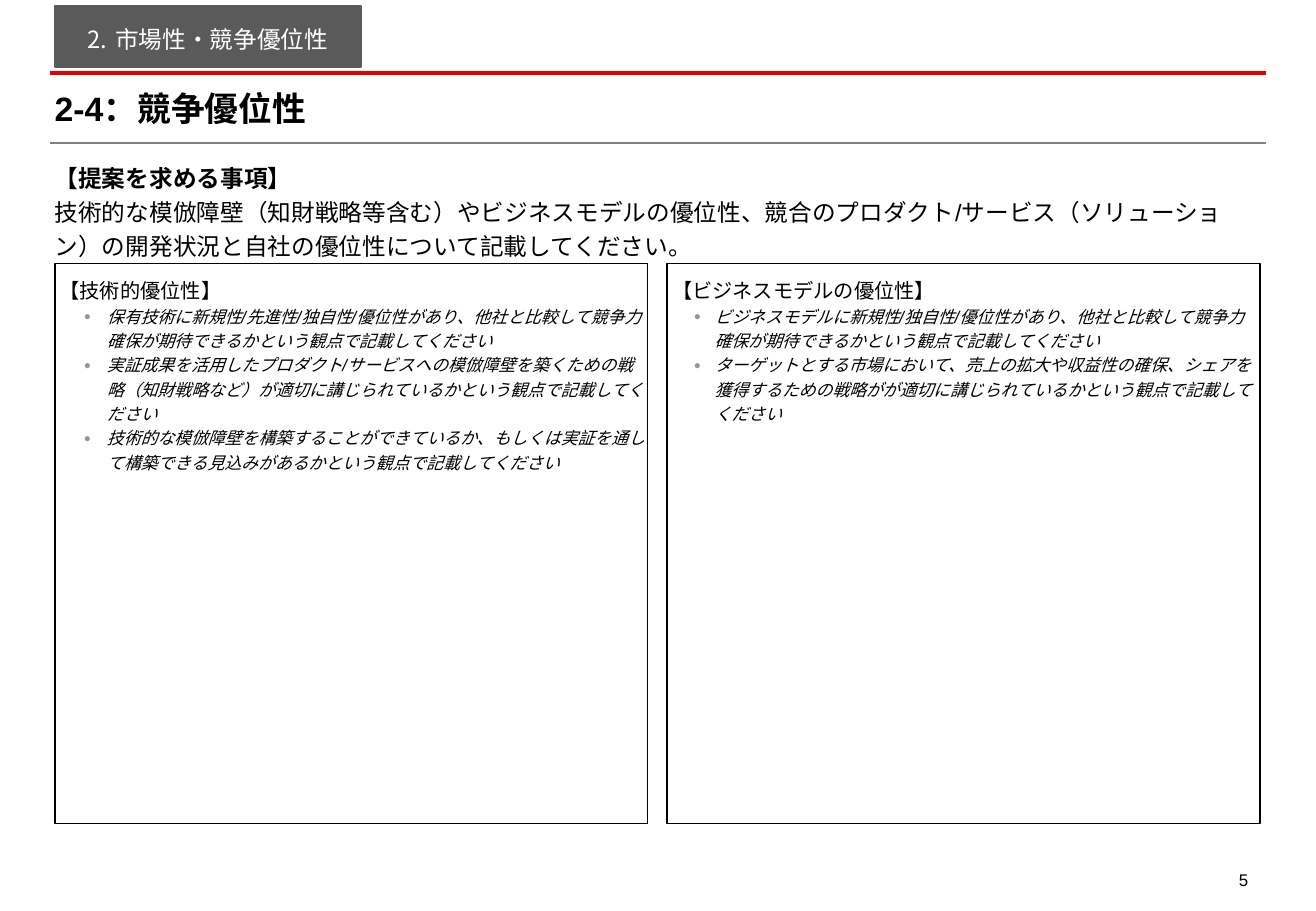
from lxml import etree
from pptx import Presentation
from pptx.dml.color import RGBColor
from pptx.enum.shapes import MSO_CONNECTOR, MSO_SHAPE
from pptx.enum.text import MSO_ANCHOR, PP_ALIGN
from pptx.oxml.ns import qn
from pptx.util import Inches, Pt

STRAIGHT, RECTANGLE = MSO_CONNECTOR.STRAIGHT, MSO_SHAPE.RECTANGLE
TOP, MIDDLE = MSO_ANCHOR.TOP, MSO_ANCHOR.MIDDLE
LEFT, CENTER, RIGHT = PP_ALIGN.LEFT, PP_ALIGN.CENTER, PP_ALIGN.RIGHT

# Content
SECTION = "市場性・競争優位性"
SECTION_NUMBER = 2
TITLE = "2-4：競争優位性"
REQUEST_HEADING = "【提案を求める事項】"
REQUEST = ("技術的な模倣障壁（知財戦略等含む）やビジネスモデルの優位性、競合のプロダクト/サービス"
           "（ソリューション）の開発状況と自社の優位性について記載してください。")
PAGE_NUMBER = "5"
# heading, (bullet text position, hanging indent), bullets
PANELS = [
    ("【技術的優位性】", (0.39, -0.19), [
        "保有技術に新規性/先進性/独自性/優位性があり、他社と比較して競争力確保が期待できるかという観点で記載してください",
        "実証成果を活用したプロダクト/サービスへの模倣障壁を築くための戦略（知財戦略など）が適切に講じられているかという観点で記載してください",
        "技術的な模倣障壁を構築することができているか、もしくは実証を通して構築できる見込みがあるかという観点で記載してください",
    ]),
    ("【ビジネスモデルの優位性】", (0.35, -0.17), [
        "ビジネスモデルに新規性/独自性/優位性があり、他社と比較して競争力確保が期待できるかという観点で記載してください",
        "ターゲットとする市場において、売上の拡大や収益性の確保、シェアを獲得するための戦略がが適切に講じられているかという観点で記載してください",
    ]),
]

# Layout in inches
SLIDE_WIDTH, SLIDE_HEIGHT = 10.83, 7.5
MARGIN = 0.45
CONTENT_WIDTH = 9.92
PANEL_TOP, PANEL_HEIGHT, PANEL_GAP = 2.17, 4.61, 0.16
PANEL_WIDTH = (CONTENT_WIDTH - PANEL_GAP) / 2
RULES = [(0.6, "E60000", 2), (1.18, "808080", 1.25)]
RULE_START, RULE_END = 0.41, 10.42
FONT = "Arial"

presentation = Presentation()
presentation.slide_width = Inches(SLIDE_WIDTH)
presentation.slide_height = Inches(SLIDE_HEIGHT)
slide = presentation.slides.add_slide(presentation.slide_layouts[6])


def color(value):
    return RGBColor.from_string(value)


def set_frame(shape, insets, anchor=TOP, wrap=True):
    frame = shape.text_frame
    frame.word_wrap = wrap
    frame.vertical_anchor = anchor
    (frame.margin_left, frame.margin_top,
     frame.margin_right, frame.margin_bottom) = [Inches(inset) for inset in insets]
    return frame


def add_text_box(box, insets=(0, 0, 0, 0), anchor=TOP):
    return set_frame(slide.shapes.add_textbox(*map(Inches, box)), insets, anchor)


def add_box(box, fill, line, insets, anchor=TOP, wrap=True):
    shape = slide.shapes.add_shape(RECTANGLE, *map(Inches, box))
    shape.shadow.inherit = False
    shape.fill.solid()
    shape.fill.fore_color.rgb = color(fill)
    shape.line.color.rgb = color(line)
    shape.line.width = Pt(1)
    return set_frame(shape, insets, anchor, wrap)


def add_paragraph(frame, text, size, first=False, bold=False, italic=False,
                  ink="000000", align=LEFT, spacing=1.2):
    paragraph = frame.paragraphs[0] if first else frame.add_paragraph()
    paragraph.alignment = align
    paragraph.line_spacing = spacing
    run = paragraph.add_run()
    run.text = text
    run.font.name = FONT
    run.font.size = Pt(size)
    run.font.bold = bold
    run.font.italic = italic
    run.font.color.rgb = color(ink)
    return paragraph


def add_bullet(paragraph, indents, ink, mark, size=None, **attributes):
    properties = paragraph._p.get_or_add_pPr()
    for name, length in zip(("marL", "indent"), indents):
        properties.set(name, str(Inches(length)))
    bullet_color = etree.SubElement(properties, qn("a:buClr"))
    etree.SubElement(bullet_color, qn("a:srgbClr"), val=ink)
    if size:
        etree.SubElement(properties, qn("a:buSzPct"), val=str(size * 1000))
    etree.SubElement(properties, qn("a:buFont"), typeface=FONT)
    etree.SubElement(properties, qn(mark), **attributes)


# Horizontal rules
for height, ink, width in RULES:
    rule = slide.shapes.add_connector(
        STRAIGHT, Inches(RULE_START), Inches(height), Inches(RULE_END), Inches(height))
    rule.line.color.rgb = color(ink)
    rule.line.width = Pt(width)
    etree.SubElement(rule._element.spPr, qn("a:effectLst"))

# Section tab
tab = add_box((MARGIN, 0.05, 2.52, 0.5), "5A5A5A", "5A5A5A", [0.02] * 4, MIDDLE, wrap=False)
section = add_paragraph(tab, SECTION, 14, first=True, ink="FFFFFF", align=CENTER)
add_bullet(section, (0.23, -0.23), "FFFFFF", "a:buAutoNum",
           type="arabicPeriod", startAt=str(SECTION_NUMBER))

# Title and request
title = add_text_box((MARGIN, 0.72, CONTENT_WIDTH, 0.34), anchor=MIDDLE)
add_paragraph(title, TITLE, 20, first=True, bold=True, spacing=1.0)
request = add_text_box((MARGIN, 1.3, CONTENT_WIDTH, 0.82))
add_paragraph(request, REQUEST_HEADING, 14, first=True, bold=True)
add_paragraph(request, REQUEST, 14)

# Answer panels
for column, (heading, indents, bullets) in enumerate(PANELS):
    left = MARGIN + column * (PANEL_WIDTH + PANEL_GAP)
    panel = add_box((left, PANEL_TOP, PANEL_WIDTH, PANEL_HEIGHT),
                    "FFFFFF", "000000", (0.04, 0.08, 0.02, 0.02))
    add_paragraph(panel, heading, 12, first=True)
    for text in bullets:
        paragraph = add_paragraph(panel, text, 10, italic=True)
        paragraph.level = 1
        add_bullet(paragraph, indents, "969696", "a:buChar", size=70, char="●")

# Page number
page = add_text_box((9.93, 7.08, 0.44, 0.28), (0.1, 0.05, 0.1, 0.05))
add_paragraph(page, PAGE_NUMBER, 10, first=True, align=RIGHT)

presentation.save("out.pptx")
